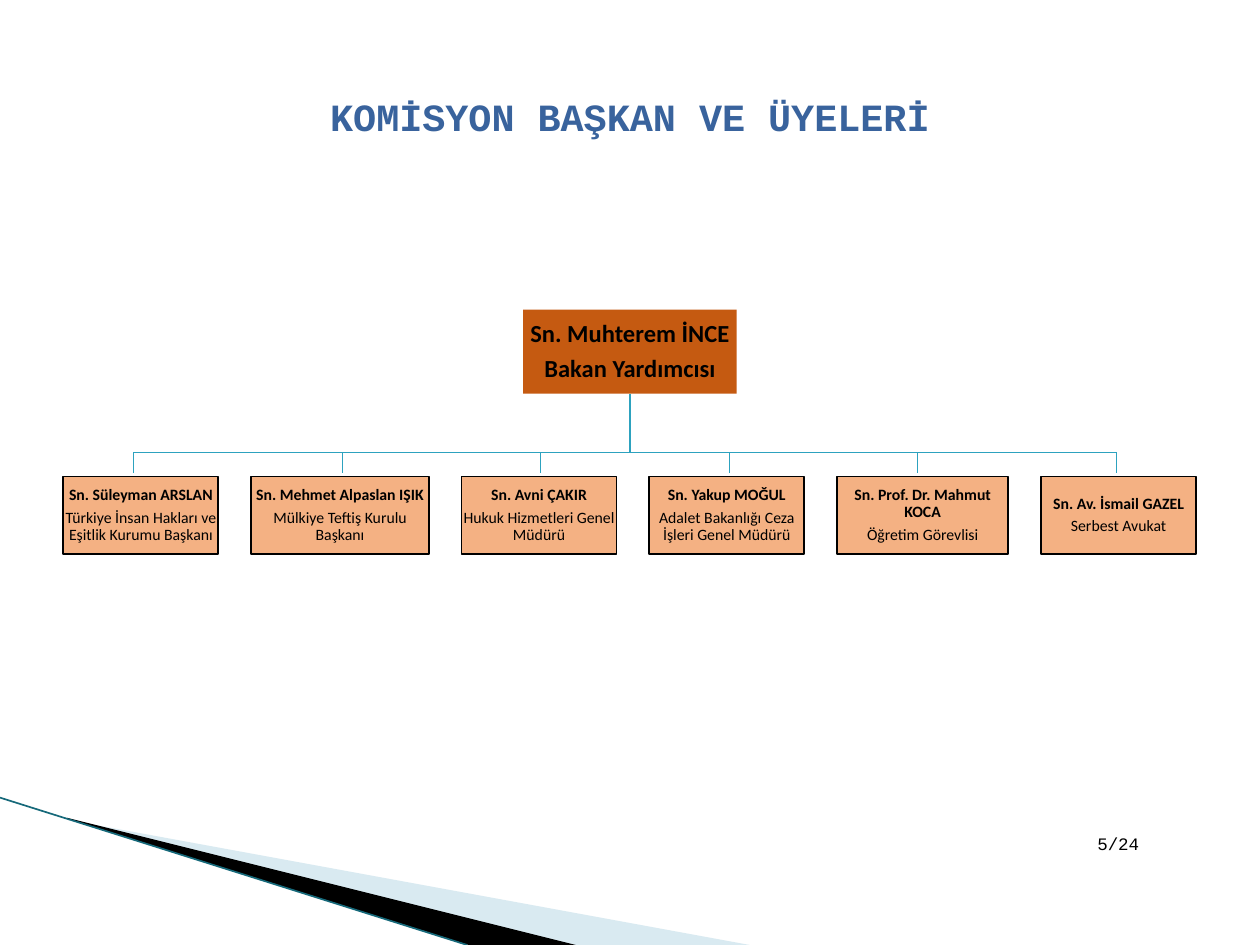
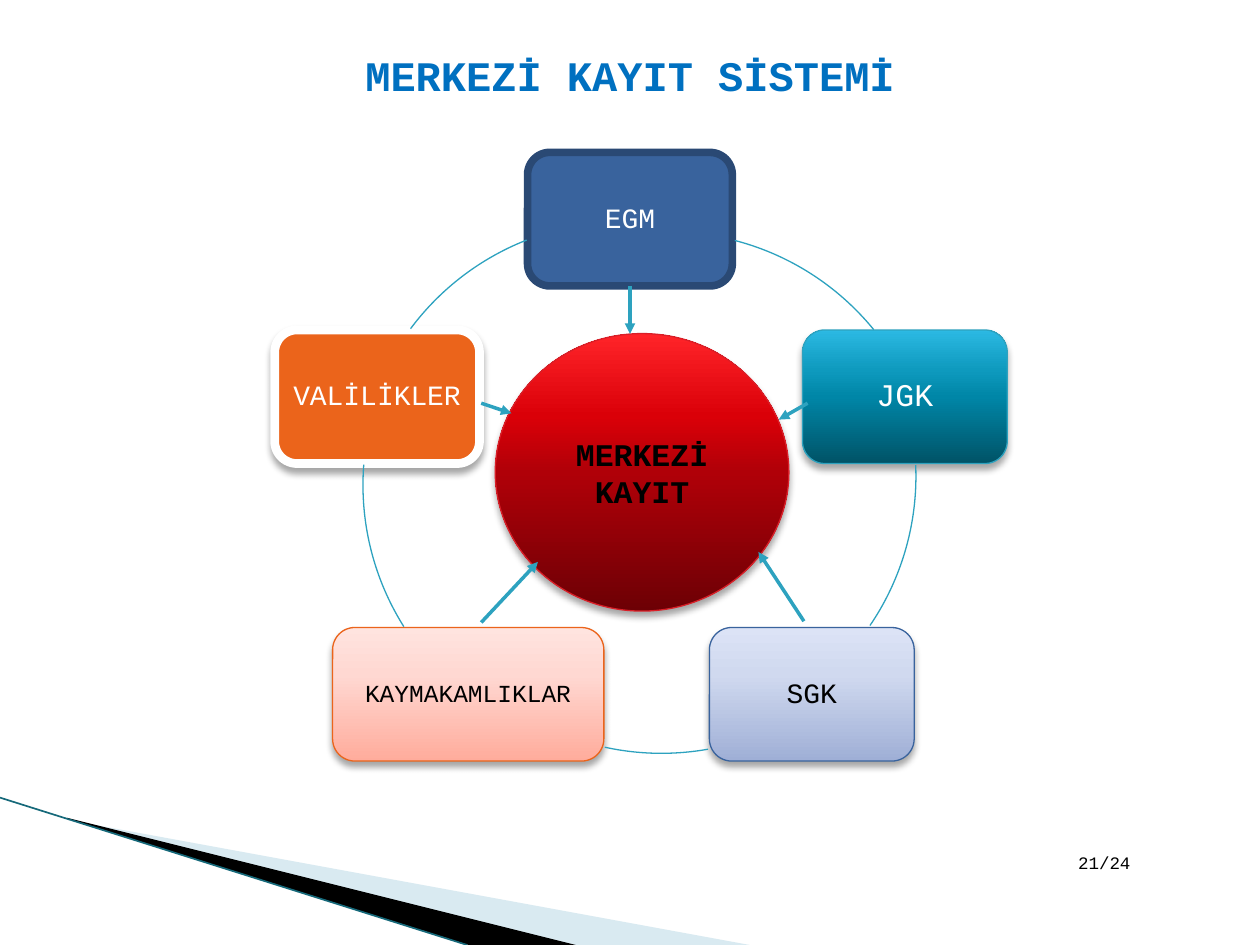
from lxml.etree import SubElement
from pptx import Presentation
from pptx.dml.color import RGBColor
from pptx.enum.shapes import MSO_CONNECTOR, MSO_SHAPE
from pptx.enum.text import MSO_ANCHOR, PP_ALIGN
from pptx.oxml.ns import qn
from pptx.util import Pt

COLORS = {
    "black": "000000", "white": "FFFFFF", "teal": "2DA2BF",
    "swoosh": "A0CBDC", "swoosh edge": "16697A",
    "title": "39639D", "bright title": "0070C0",
    "chair": "C55A11", "member": "F4B183",
    "navy": "39639D", "navy edge": "2A4974", "orange": "EB641B", "red": "DA1F28",
}
# Gradient stops run from the bottom of a shape to its top
GRADIENTS = {
    "teal": [(0, "005367"), (50, "0086A7"), (70, "0E9ABE"), (100, "2CB9E3")],
    "blue": [(0, "9FAFD6"), (65, "D0D9EF"), (100, "DCE3F6")],
    "salmon": [(0, "FFAC9C"), (65, "FFD8D2"), (100, "FFE4DF")],
    "red": [(0, "6D0005"), (50, "B00008"), (70, "DA0008"), (100, "FF2429")],
}
MONO, SANS = "Courier New", "Calibri"


def rgb(name):
    return RGBColor.from_string(COLORS[name])


def write(paragraph, text, font=MONO, size=16, color="black", bold=False,
          align=PP_ALIGN.CENTER, spacing=None, after=None):
    paragraph.alignment = align
    if spacing:
        paragraph.line_spacing = spacing
    if after:
        paragraph.space_after = Pt(after)
    run = paragraph.add_run()
    run.text = text
    run.font.name = font
    run.font.size = Pt(size)
    run.font.bold = bold
    run.font.color.rgb = rgb(color)


class Deck:
    def __init__(self):
        self.presentation = Presentation()
        self.presentation.slide_width = Pt(720)
        self.presentation.slide_height = Pt(540)
        self.slide = None

    def new_slide(self):
        self.slide = self.presentation.slides.add_slide(
            self.presentation.slide_layouts[6])
        # Corner decoration
        self.outline([(39.6, 468.7), (428.4, 540), (328.3, 540), (39.6, 468)],
                     "swoosh", opacity=40)
        self.outline([(38.2, 467.3), (329, 540), (267.8, 540), (38.9, 468)], "black")
        self.line((0, 455.8), (267, 540), color="swoosh edge", width=0.95)

    def outline(self, points, fill, opacity=100):
        builder = self.slide.shapes.build_freeform(*map(Pt, points[0]), scale=1.0)
        builder.add_line_segments([(Pt(x), Pt(y)) for x, y in points[1:]])
        wedge = builder.convert_to_shape()
        wedge.shadow.inherit = False
        wedge.line.fill.background()
        wedge.fill.solid()
        wedge.fill.fore_color.rgb = rgb(fill)
        if opacity < 100:
            tint = wedge.element.spPr.find(".//" + qn("a:srgbClr"))
            SubElement(tint, qn("a:alpha"), val=str(opacity * 1000))

    def line(self, start, end, color="teal", width=0.75, arrow=False, source=None):
        """A source is a shape whose bottom middle the line starts from."""
        link = self.slide.shapes.add_connector(
            MSO_CONNECTOR.STRAIGHT, *map(Pt, start + end))
        if source is not None:
            link.begin_connect(source, 2)
        link.line.color.rgb = rgb(color)
        link.line.width = Pt(width)
        properties = link.element.spPr
        if arrow:
            SubElement(properties.find(qn("a:ln")), qn("a:tailEnd"), type="triangle")
        SubElement(properties, qn("a:effectLst"))

    def text(self, box, text, anchor=MSO_ANCHOR.MIDDLE, **style):
        frame = self.slide.shapes.add_textbox(*map(Pt, box)).text_frame
        frame.word_wrap = True
        frame.vertical_anchor = anchor
        write(frame.paragraphs[0], text, **style)

    def title(self, text, top, **style):
        self.text((36, top, 648, 90), text, bold=True, **style)

    def page_number(self, text, right, bottom):
        self.text((right - 60, bottom - 29, 60, 29), text, MSO_ANCHOR.BOTTOM,
                  size=10, align=PP_ALIGN.RIGHT)

    def shape(self, kind, box, fill=None, gradient=None, edge=None, edge_width=0.75,
              shadow=False, inset=None):
        shape = self.slide.shapes.add_shape(kind, *map(Pt, box))
        shape.shadow.inherit = False
        properties = shape.element.spPr
        if gradient:
            shape.fill.gradient()
            shape.fill.gradient_angle = 90
            stops = properties.find(".//" + qn("a:gsLst"))
            stops.clear()
            for position, color in GRADIENTS[gradient]:
                stop = SubElement(stops, qn("a:gs"), pos=str(position * 1000))
                SubElement(stop, qn("a:srgbClr"), val=color)
        elif fill:
            shape.fill.solid()
            shape.fill.fore_color.rgb = rgb(fill)
        else:
            shape.fill.background()
        if edge:
            shape.line.color.rgb = rgb(edge)
            shape.line.width = Pt(edge_width)
        else:
            shape.line.fill.background()
        if shadow:
            outer = SubElement(properties.find(qn("a:effectLst")), qn("a:outerShdw"),
                               blurRad=str(Pt(4)), dist=str(Pt(3)), dir="5400000",
                               rotWithShape="0")
            black = SubElement(outer, qn("a:srgbClr"), val=COLORS["black"])
            SubElement(black, qn("a:alpha"), val="35000")
        frame = shape.text_frame
        frame.word_wrap = True
        frame.vertical_anchor = MSO_ANCHOR.MIDDLE
        if inset is not None:
            frame.margin_left = frame.margin_right = Pt(inset)
            frame.margin_top = frame.margin_bottom = Pt(inset)
        return shape

    def person(self, box, name, role, size, role_bold=False, **look):
        card = self.shape(MSO_SHAPE.RECTANGLE, box, inset=0.5, **look)
        style = {"font": SANS, "size": size, "spacing": 0.9}
        frame = card.text_frame
        write(frame.paragraphs[0], name, bold=True, after=0.35 * size, **style)
        write(frame.add_paragraph(), role, bold=role_bold, **style)
        return card

    def arc(self, left, top, diameter, start, end):
        curve = self.shape(MSO_SHAPE.ARC, (left, top, diameter, diameter), edge="teal")
        # Angles are stored in 60000ths of a degree, adjustments in 100000ths
        curve.adjustments[0] = start * 0.6
        curve.adjustments[1] = end * 0.6


def commission_slide(deck):
    deck.new_slide()
    deck.title("KOMİSYON BAŞKAN VE ÜYELERİ", top=21.6, size=22, color="title")
    deck.page_number("5/24", right=658, bottom=491.8)

    # Chair and the trunk of the tree
    chair = deck.person((299, 177, 122, 48), "Sn. Muhterem İNCE", "Bakan Yardımcısı",
                        size=14, role_bold=True, fill="chair")
    trunk_y, drop_end = 258.5, 270
    deck.line((360, 225), (360, trunk_y), source=chair)

    # Members: name, role, card width, place of the branch
    members = [
        ("Sn. Süleyman ARSLAN", "Türkiye İnsan Hakları ve Eşitlik Kurumu Başkanı",
         88.6, 76.3),
        ("Sn. Mehmet Alpaslan IŞIK", "Mülkiye Teftiş Kurulu Başkanı", 101.5, 195.8),
        ("Sn. Avni ÇAKIR", "Hukuk Hizmetleri Genel Müdürü", 88.6, 308.9),
        ("Sn. Yakup MOĞUL", "Adalet Bakanlığı Ceza İşleri Genel Müdürü", 88.6, 416.9),
        ("Sn. Prof. Dr. Mahmut KOCA", "Öğretim Görevlisi", 97.9, 524.2),
        ("Sn. Av. İsmail GAZEL", "Serbest Avukat", 88.6, 637.9),
    ]
    left, gap = 36.2, 18.7
    for name, role, width, branch_x in members:
        deck.person((left, 272.2, width, 44.6), name, role, size=9,
                    fill="member", edge="black", edge_width=1)
        deck.line((branch_x, trunk_y), (branch_x, drop_end))
        left += width + gap
    for outermost in (members[0], members[-1]):
        deck.line((360, trunk_y), (outermost[3], trunk_y))


def registry_slide(deck):
    deck.new_slide()
    deck.title("MERKEZİ KAYIT SİSTEMİ", top=-2.2, size=24, color="bright title")
    deck.page_number("21/24", right=653, bottom=502.6)

    # Institutions around the ring
    width, height, middle_y, lower_y = 117, 76.3, 188.6, 358.6
    institutions = [
        ("EGM", 301.5, 87.1, width, 16, "white",
         {"fill": "navy", "edge": "navy edge", "edge_width": 4.33}),
        ("JGK", 458.6, middle_y, width, 18, "white",
         {"gradient": "teal", "edge": "teal", "shadow": True}),
        ("SGK", 405.4, lower_y, width, 16, "black",
         {"gradient": "blue", "edge": "navy", "shadow": True}),
        ("KAYMAKAMLIKLAR", 190.1, lower_y, 155, 14, "black",
         {"gradient": "salmon", "edge": "orange", "shadow": True}),
        ("VALİLİKLER", 157, middle_y, width, 16, "white",
         {"fill": "orange", "edge": "white", "edge_width": 5, "shadow": True}),
    ]
    cards = {}
    for name, left, top, card_width, size, color, look in institutions:
        card = deck.shape(MSO_SHAPE.ROUNDED_RECTANGLE,
                          (left, top, card_width, height), inset=4.5, **look)
        write(card.text_frame.paragraphs[0], name, size=size, color=color, spacing=0.9)
        cards[name] = card

    # Ring segments, clockwise: left, top, start angle, end angle
    for left, top, start, end in [
        (229.7, 132.5, 284.6, 320.8), (219.6, 120.2, 357.6, 34.2),
        (226.1, 126.7, 79.9, 102.3), (207.4, 125.3, 147.8, 184.4),
        (204.5, 126.7, 216.7, 248.6),
    ]:
        deck.arc(left, top, 303.8, start, end)

    # Central registry
    registry = deck.shape(MSO_SHAPE.OVAL, (283, 190.6, 167.8, 158.6),
                          gradient="red", edge="red", shadow=True)
    write(registry.text_frame.paragraphs[0], "MERKEZİ KAYIT", size=18, bold=True)

    # Arrows into the registry
    for start, end, source in [
        ((360, 163.4), (360, 190.8), cards["EGM"]),
        ((275, 230.4), (292.3, 236.2), None),
        ((461.5, 230.4), (445, 239.8), None),
        ((275, 355.7), (307.4, 321.1), None),
        ((459.4, 355), (433.4, 315.4), None),
    ]:
        deck.line(start, end, width=2, arrow=True, source=source)


def main():
    deck = Deck()
    commission_slide(deck)
    registry_slide(deck)
    deck.presentation.save("out.pptx")


if __name__ == "__main__":
    main()
